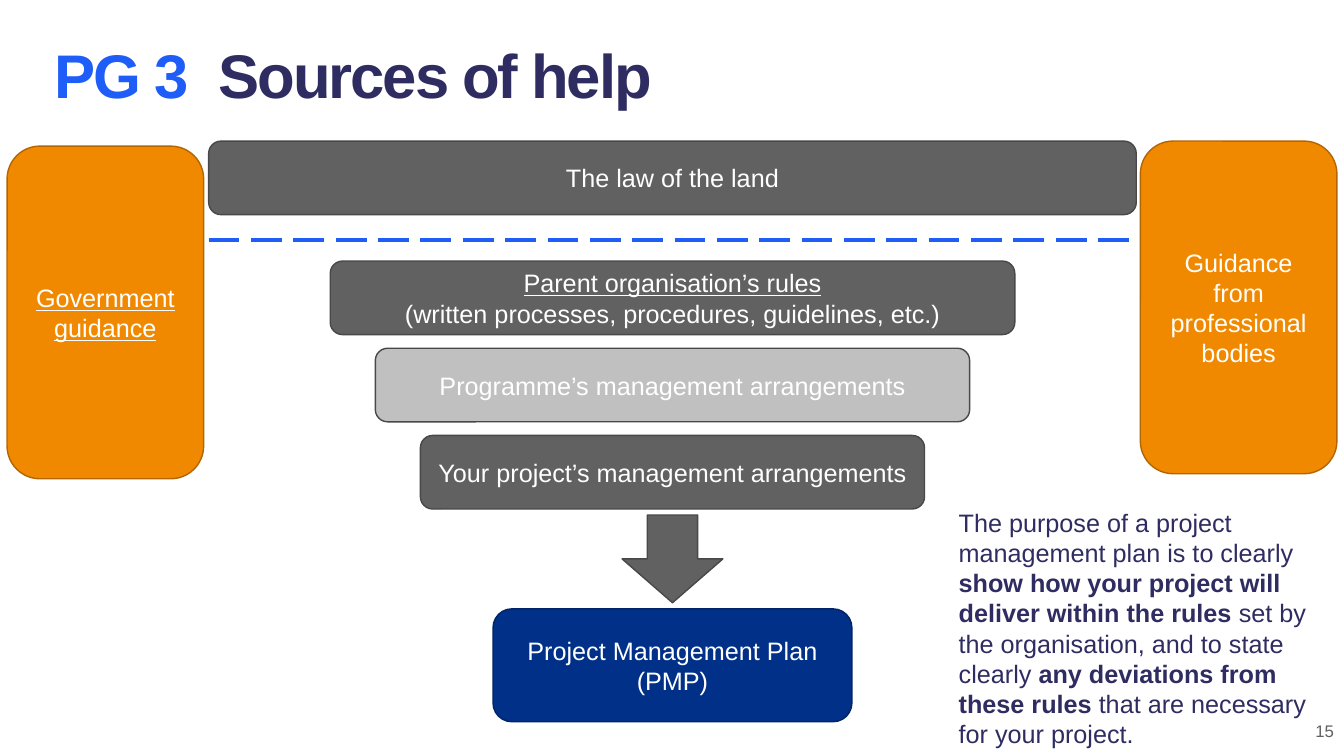
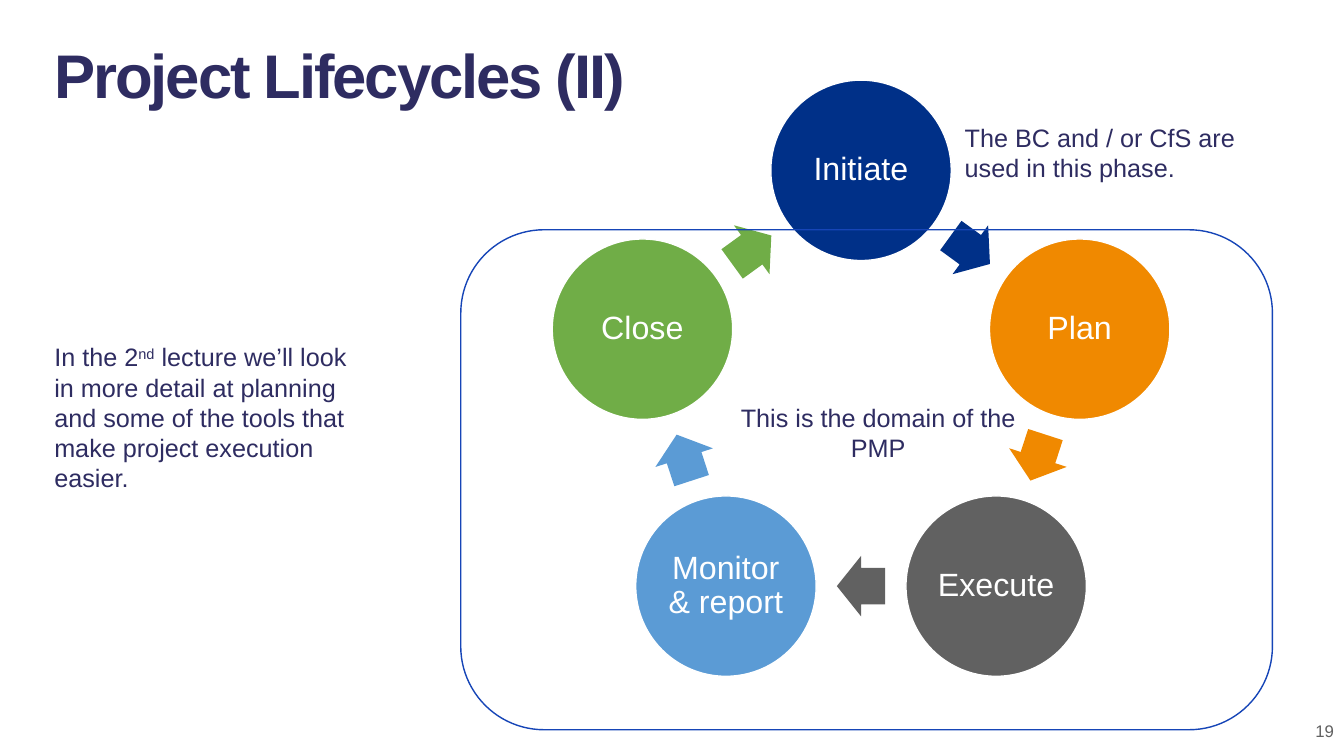
import math

import pptx
import pptx.dml.color
import pptx.enum.dml
import pptx.enum.shapes
import pptx.enum.text
import pptx.util
import lxml.etree
import pptx.oxml.ns

Inches = pptx.util.Inches
Pt = pptx.util.Pt
RGBColor = pptx.dml.color.RGBColor
SHAPE = pptx.enum.shapes.MSO_SHAPE
ALIGN = pptx.enum.text.PP_ALIGN
ANCHOR = pptx.enum.text.MSO_ANCHOR

FONT = "Arial"
WHITE = RGBColor(0xFF, 0xFF, 0xFF)
NAVY = RGBColor(0x2E, 0x2C, 0x61)
BRIGHT_BLUE = RGBColor(0x1E, 0x5D, 0xF8)
DEEP_BLUE = RGBColor(0x00, 0x30, 0x88)
DEEP_BLUE_EDGE = RGBColor(0x00, 0x24, 0x65)
FRAME_BLUE = RGBColor(0x16, 0x45, 0xB7)
SKY = RGBColor(0x5B, 0x9B, 0xD5)
GREEN = RGBColor(0x70, 0xAD, 0x47)
ORANGE = RGBColor(0xF0, 0x89, 0x00)
ORANGE_EDGE = RGBColor(0xB2, 0x65, 0x00)
GREY = RGBColor(0x61, 0x61, 0x61)
GREY_EDGE = RGBColor(0x48, 0x48, 0x48)
SILVER = RGBColor(0xC0, 0xC0, 0xC0)

BOLD = {"bold": True}
UNDERLINE = {"underline": True}


def write(tf, *paragraphs, size=18, color=NAVY, align=ALIGN.LEFT,
          anchor=ANCHOR.TOP, spacing=None, bold=False, tracking=None):
    tf.word_wrap = True
    tf.auto_size = pptx.enum.text.MSO_AUTO_SIZE.NONE
    tf.vertical_anchor = anchor
    for i, runs in enumerate(paragraphs):
        p = tf.paragraphs[0] if i == 0 else tf.add_paragraph()
        p.alignment = align
        p.line_spacing = spacing
        for run in [runs] if isinstance(runs, str) else runs:
            text, style = (run, {}) if isinstance(run, str) else run
            r = p.add_run()
            r.text = text
            r.font.name = FONT
            r.font.size = Pt(size)
            r.font.bold = style.get("bold", bold)
            r.font.underline = style.get("underline", False)
            r.font.color.rgb = style.get("color", color)
            rPr = r._r.get_or_add_rPr()
            if tracking:
                rPr.set("spc", str(int(tracking * 100)))
            if "baseline" in style:
                rPr.set("baseline", str(style["baseline"] * 1000))


def add_text(s, box, *paragraphs, **style):
    tb = s.shapes.add_textbox(*map(Inches, box))
    write(tb.text_frame, *paragraphs, **style)


def add_block(s, kind, box, fill, edge):
    sp = s.shapes.add_shape(kind, *map(Inches, box))
    sp.shadow.inherit = False
    if fill is None:
        sp.fill.background()
    else:
        sp.fill.solid()
        sp.fill.fore_color.rgb = fill
    sp.line.color.rgb = edge
    sp.line.width = Pt(1)
    return sp


def add_label_block(s, box, fill, edge, *paragraphs):
    sp = add_block(s, SHAPE.ROUNDED_RECTANGLE, box, fill, edge)
    write(sp.text_frame, *paragraphs, color=WHITE, align=ALIGN.CENTER,
          anchor=ANCHOR.MIDDLE)


def add_slide(prs, title, number):
    s = prs.slides.add_slide(prs.slide_layouts.get_by_name("Title Only"))
    sp = s.shapes.title
    sp.left, sp.top, sp.width, sp.height = map(Inches, (0.44, 0.32, 10.7, 0.84))
    write(sp.text_frame, title, size=44, bold=True, tracking=-1.5)
    add_text(s, (10.33, 7.1, 3, 0.4), number, size=12, color=GREY,
             align=ALIGN.RIGHT)
    return s


def add_divider(s, x, y, w):
    line = s.shapes.add_connector(
        pptx.enum.shapes.MSO_CONNECTOR.STRAIGHT,
        Inches(x), Inches(y), Inches(x + w), Inches(y))
    line.line.color.rgb = BRIGHT_BLUE
    line.line.width = Pt(2.75)
    line.line.dash_style = pptx.enum.dml.MSO_LINE.LONG_DASH
    lxml.etree.SubElement(line._element.spPr,
                          pptx.oxml.ns.qn("a:effectLst"))


def add_rule_funnel(s, box):
    x, y, w, h = box
    center, row_h = x + w / 2, 0.73
    add_label_block(s, (x, y, w, row_h), GREY, GREY_EDGE,
                    "The law of the land")
    add_divider(s, x, y + 0.98, w)
    levels = [
        (GREY, [[("Parent organisation’s rules", UNDERLINE)],
                "(written processes, procedures, guidelines, etc.)"]),
        (SILVER, ["Programme’s management arrangements"]),
        (GREY, ["Your project’s management arrangements"]),
    ]
    for i, (fill, text) in enumerate(levels):
        level_w = 6.79 - 0.895 * i
        add_label_block(
            s, (center - level_w / 2, y + 1.19 + 0.865 * i, level_w, row_h),
            fill, GREY_EDGE, *text)
    add_block(s, SHAPE.DOWN_ARROW, (center - 0.5, y + 3.71, 1, 0.87),
              GREY, GREY_EDGE)
    add_label_block(s, (center - 1.78, y + h - 1.12, 3.56, 1.12),
                    DEEP_BLUE, DEEP_BLUE_EDGE,
                    "Project Management Plan", "(PMP)")


def build_sources_of_help(prs):
    s = add_slide(prs, [("PG 3  ", {"color": BRIGHT_BLUE}),
                        "Sources of help"], "15")
    add_rule_funnel(s, (2.07, 1.4, 9.2, 5.76))
    add_label_block(s, (11.31, 1.4, 1.95, 3.3), ORANGE, ORANGE_EDGE,
                    "Guidance from professional", "bodies")
    add_label_block(s, (0.07, 1.45, 1.95, 3.3), ORANGE, ORANGE_EDGE,
                    [("Government guidance", UNDERLINE)])
    add_text(s, (9.41, 4.98, 3.85, 2.52), [
        "The purpose of a project management plan is to clearly ",
        ("show how your project will deliver within the rules ", BOLD),
        "set by the organisation, and to state clearly ",
        ("any deviations from these rules ", BOLD),
        "that are necessary for your project."])


def add_cycle(s, cx, cy, radius, phases):
    size, arrow_w, arrow_h = 1.79, 0.48, 0.6
    step = 360 / len(phases)

    def centred(angle, distance, w, h):
        a = math.radians(angle)
        return (cx + distance * math.sin(a) - w / 2,
                cy - distance * math.cos(a) - h / 2, w, h)

    for i, (name, color) in enumerate(phases):
        angle = i * step
        sp = add_block(s, SHAPE.OVAL, centred(angle, radius, size, size),
                       color, WHITE)
        tf = sp.text_frame
        tf.margin_left = tf.margin_right = Inches(0.03)
        tf.margin_top = tf.margin_bottom = Inches(0.03)
        write(tf, name, size=23, color=WHITE, align=ALIGN.CENTER,
              anchor=ANCHOR.MIDDLE, spacing=0.9)
        middle = angle + step / 2
        chord = radius * math.cos(math.radians(step / 2))
        arrow = add_block(s, SHAPE.RIGHT_ARROW,
                          centred(middle, chord, arrow_w, arrow_h),
                          color, color)
        arrow.line.fill.background()
        arrow.adjustments[0] = 0.6
        arrow.adjustments[1] = 0.5
        arrow.rotation = middle


def build_project_lifecycles(prs):
    s = add_slide(prs, "Project Lifecycles (II)", "19")
    add_cycle(s, 8.54, 3.97, 2.28, [
        ("Initiate", DEEP_BLUE), ("Plan", ORANGE), ("Execute", GREY),
        ("Monitor & report", SKY), ("Close", GREEN)])
    add_block(s, SHAPE.ROUNDED_RECTANGLE, (4.57, 2.28, 8.05, 4.96),
              None, FRAME_BLUE)
    add_text(s, (9.47, 1.16, 3.14, 0.71),
             "The BC and / or CfS are used in this phase.")
    add_text(s, (7.14, 3.94, 3.14, 0.71), "This is the domain of the PMP",
             align=ALIGN.CENTER)
    add_text(s, (0.44, 3.34, 3.32, 1.62), [
        "In the 2", ("nd", {"baseline": 30}),
        " lecture we’ll look in more detail at planning and some of the "
        "tools that make project execution easier."])


def main():
    prs = pptx.Presentation()
    prs.slide_width, prs.slide_height = Inches(13.33), Inches(7.5)
    build_sources_of_help(prs)
    build_project_lifecycles(prs)
    prs.save("out.pptx")


if __name__ == "__main__":
    main()
